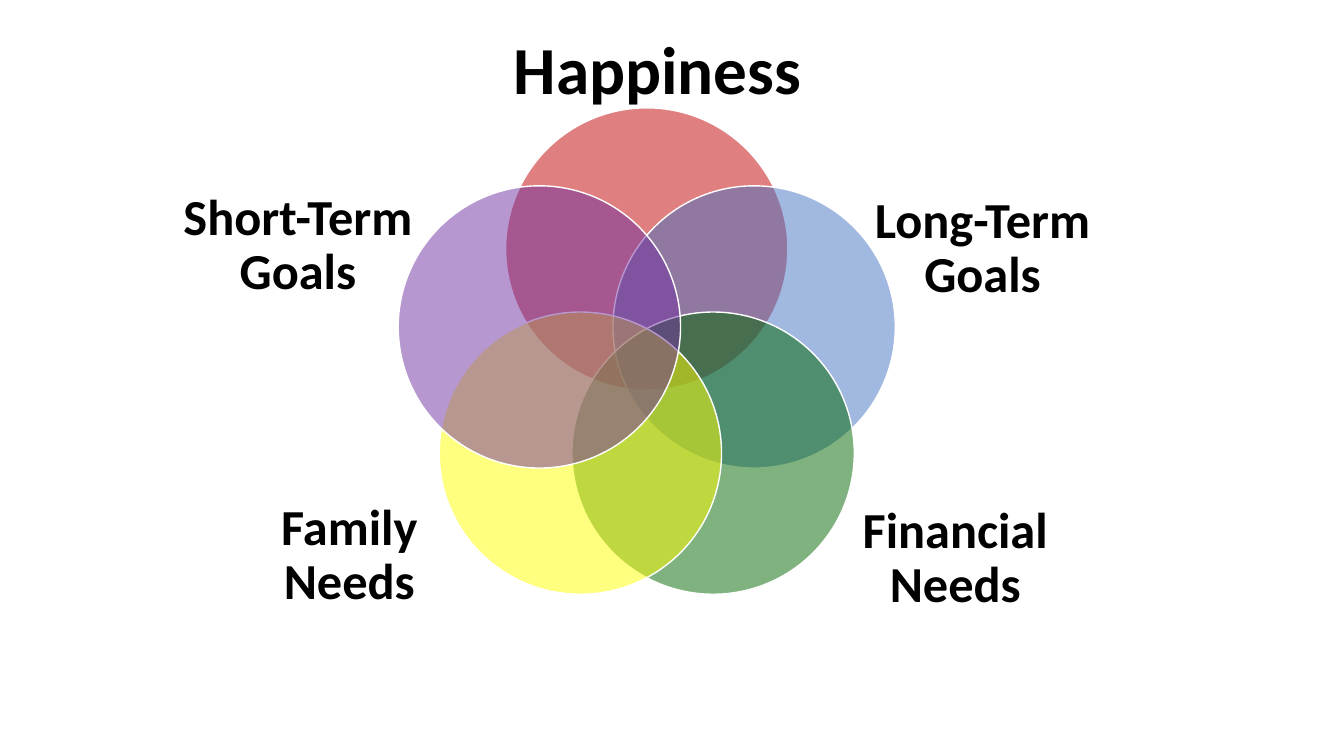
from dataclasses import dataclass
from math import cos, pi, sin

from lxml import etree
from pptx import Presentation
from pptx.dml.color import RGBColor
from pptx.enum.shapes import MSO_SHAPE as SHAPE
from pptx.enum.text import MSO_ANCHOR as ANCHOR, MSO_AUTO_SIZE as FIT, PP_ALIGN as ALIGN
from pptx.oxml.ns import qn
from pptx.util import Inches, Pt


@dataclass(frozen=True)
class Theme:
    """Hold the colours, font and type sizes of the slide."""
    font: str = "Calibri"
    text: str = "000000"
    outline: str = "FFFFFF"
    opacity: int = 50
    title_size: int = 48
    label_size: int = 36


THEME = Theme()
CIRCLE_COLORS = ["C00000", "4472C4", "006600", "FFFF00", "7030A0"]
LABELS = [
    ("Long-Term Goals", (8.29, 1.45, 2.91, 2.04)),
    ("Financial Needs", (8.43, 4.53, 2.09, 2.04)),
    ("Family Needs", (2.42, 4.5, 2.09, 2.04)),
    ("Short-Term Goals", (1.5, 1.42, 2.91, 2.04)),
]


def write_label(s, text, size, box):
    """Place a text shape in the box and fill it with bold centred text."""
    s.left, s.top, s.width, s.height = (Inches(v) for v in box)
    tf = s.text_frame
    tf.text = text
    tf.word_wrap = True
    tf.auto_size = FIT.NONE
    tf.vertical_anchor = ANCHOR.MIDDLE
    tf.margin_left = tf.margin_right = tf.margin_top = tf.margin_bottom = 0
    p = tf.paragraphs[0]
    p.alignment = ALIGN.CENTER
    p.line_spacing = 0.9
    p.font.name = THEME.font
    p.font.size = Pt(size)
    p.font.bold = True
    p.font.color.rgb = RGBColor.from_string(THEME.text)


def add_circle(slide, color, left, top, diameter):
    """Add one translucent circle with a thin outline."""
    s = slide.shapes.add_shape(
        SHAPE.OVAL, Inches(left), Inches(top), Inches(diameter), Inches(diameter))
    s.shadow.inherit = False
    s.fill.solid()
    s.fill.fore_color.rgb = RGBColor.from_string(color)
    srgb = s.fill._xPr.find(".//" + qn("a:srgbClr"))
    etree.SubElement(srgb, qn("a:alpha"), val=str(THEME.opacity * 1000))
    s.line.color.rgb = RGBColor.from_string(THEME.outline)
    s.line.width = Pt(1)


def add_venn(slide, box, diameter):
    """Space the circles evenly clockwise from the top of the box."""
    left, top, width, _ = box
    orbit = (width - diameter) / 2 / sin(2 * pi / len(CIRCLE_COLORS))
    for i, color in enumerate(CIRCLE_COLORS):
        angle = 2 * pi * i / len(CIRCLE_COLORS)
        x = left + (width - diameter) / 2 + orbit * sin(angle)
        y = top + orbit * (1 - cos(angle))
        add_circle(slide, color, x, y, diameter)


def build_venn_slide(prs):
    """Build the title, the ring of circles and the labels around it."""
    slide = prs.slides.add_slide(prs.slide_layouts[5])
    write_label(slide.shapes.title, "Happiness", THEME.title_size, (4.9, -0.22, 3.25, 1.88))
    add_venn(slide, (3.95, 1.07, 4.93, 4.82), 2.8)
    for text, box in LABELS:
        s = slide.shapes.add_textbox(0, 0, 0, 0)
        write_label(s, text, THEME.label_size, box)


def main():
    """Create and save the presentation."""
    prs = Presentation()
    prs.slide_width, prs.slide_height = Inches(13.33), Inches(7.5)
    build_venn_slide(prs)
    prs.save("out.pptx")


if __name__ == "__main__":
    main()
